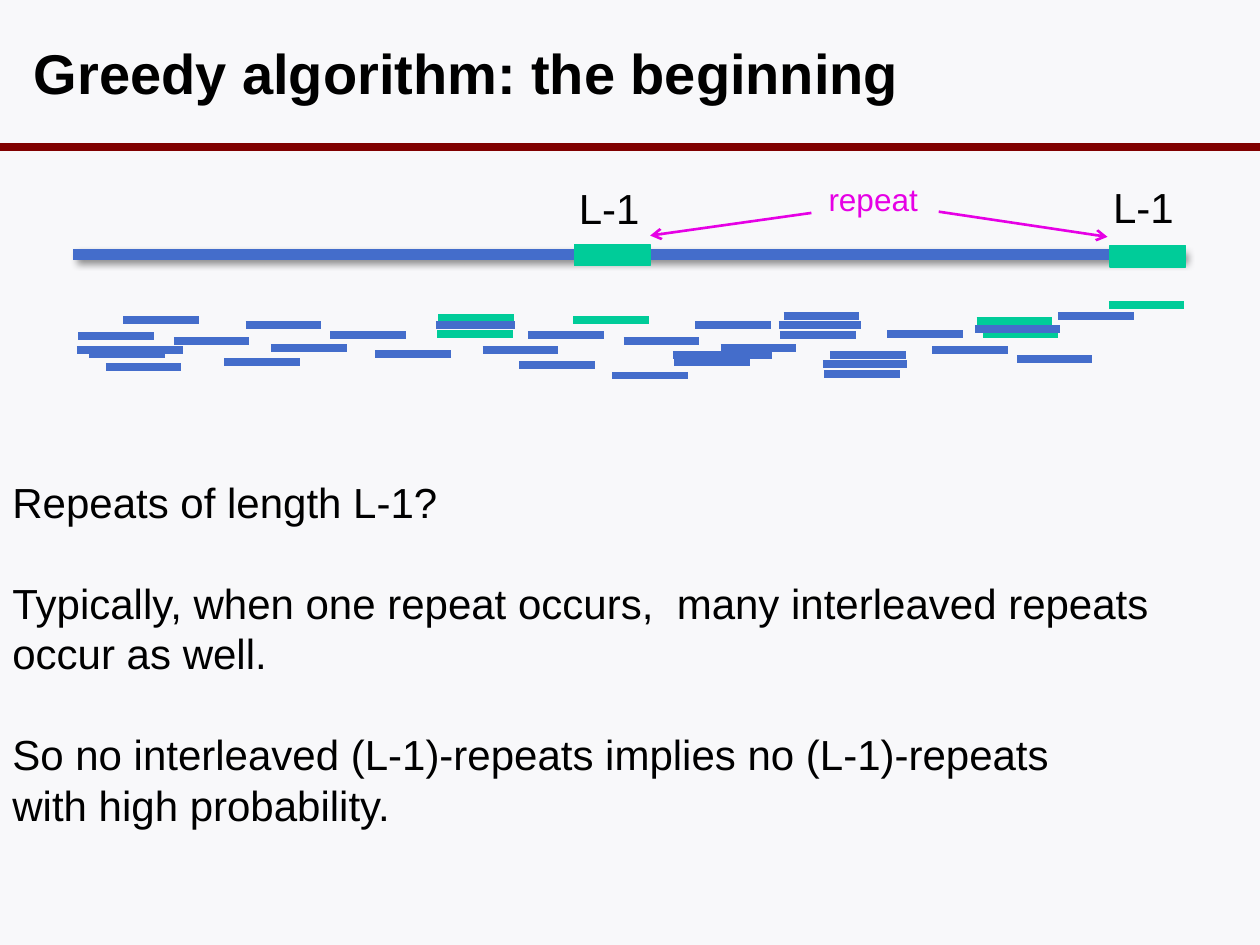
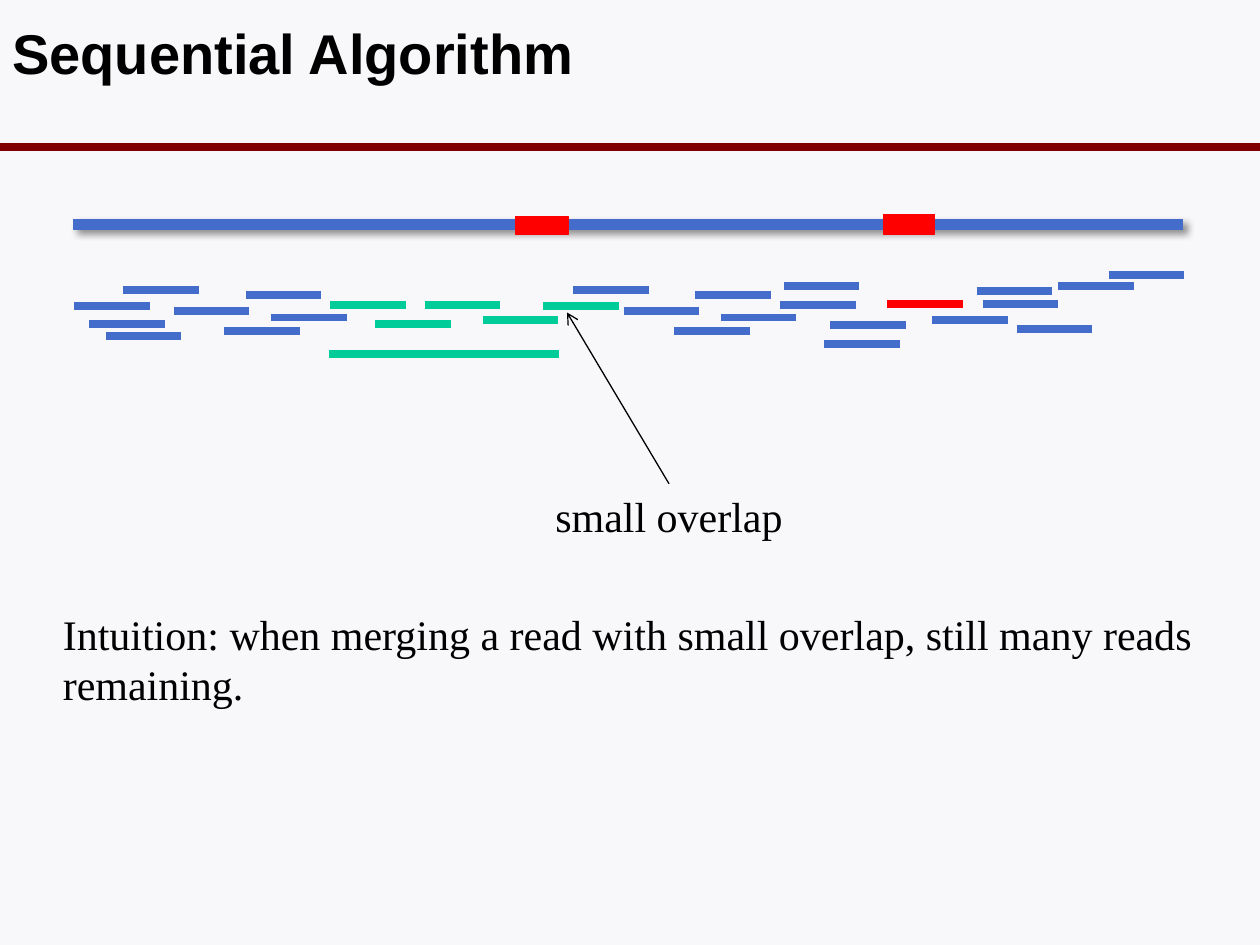
"""Builds two slides on greedy and sequential read assembly."""
import dataclasses

import lxml.etree
import pptx
import pptx.dml.color
import pptx.enum.shapes
import pptx.enum.text
import pptx.oxml
import pptx.oxml.ns
import pptx.util

Inches = pptx.util.Inches
Pt = pptx.util.Pt
RGB = pptx.dml.color.RGBColor.from_string
ALIGN = pptx.enum.text.PP_ALIGN
ANCHOR = pptx.enum.text.MSO_ANCHOR
qn = pptx.oxml.ns.qn


@dataclasses.dataclass(frozen=True)
class Theme:
    background: str = "F8F8FA"
    band: str = "800000"
    blue: str = "446DCB"
    green: str = "00CC99"
    red: str = "FF0000"
    magenta: str = "E600E5"
    black: str = "000000"
    sans: str = "Arial"
    serif: str = "Times New Roman"
    title_size: float = 32
    body_size: float = 24
    note_size: float = 18
    genome_width: float = 6
    read_width: float = 4.5
    blank_line: float = 29


theme = Theme()
SHADOW = (
    '<a:outerShdw xmlns:a="http://schemas.openxmlformats.org/drawingml/2006/main" '
    'blurRad="50800" dist="38100" dir="2700000" algn="tl" rotWithShape="0">'
    '<a:srgbClr val="000000"><a:alpha val="43000"/></a:srgbClr></a:outerShdw>'
)


def add_line(s, start, end, color, width, arrow=False, shadow=False):
    points = [Inches(v) for v in (*start, *end)]
    line = s.shapes.add_connector(pptx.enum.shapes.MSO_CONNECTOR.STRAIGHT, *points)
    line.line.color.rgb = RGB(color)
    line.line.width = Pt(width)
    sppr = line._element.spPr
    if arrow:
        lxml.etree.SubElement(sppr.find(qn("a:ln")), qn("a:tailEnd"), type="arrow")
    effects = lxml.etree.SubElement(sppr, qn("a:effectLst"))
    if shadow:
        effects.append(pptx.oxml.parse_xml(SHADOW))
    return line


def add_text(s, box, paragraphs, size, font=theme.sans, color=theme.black,
             align=ALIGN.LEFT, bold=False, anchor=ANCHOR.TOP):
    sp = s.shapes.add_textbox(*[Inches(v) for v in box])
    tf = sp.text_frame
    tf.text = "\n".join(paragraphs)
    tf.word_wrap = align == ALIGN.LEFT
    tf.vertical_anchor = anchor
    for p in tf.paragraphs:
        p.alignment = align
        for r in p.runs:
            r.font.name = font
            r.font.size = Pt(size)
            r.font.bold = bold
            r.font.color.rgb = RGB(color)
    return sp


genome_left, genome_right = 0.58, 9.39
read_length = 0.6
merge_margin = 0.01

motif_starts = {1: 0.98, 2: 4.55}
motif = {"a": (0, 0.52), "b": (0.4, 0.69), "c": (0.8, 0.85), "d": (0.97, 0.56),
         "e": (1.17, 0.74), "f": (1.64, 0.64), "g": (2.85, 0.76)}
shared_reads = {
    f"{letter}{number}": (start + offset, drop)
    for number, start in motif_starts.items()
    for letter, (offset, drop) in motif.items()
}
shared_reads |= {
    "head_upper": (0.71, 0.79), "head_lower": (0.84, 0.89),
    "bridge": (2.98, 0.79),
    "peak": (6.22, 0.49), "valley_upper": (6.59, 0.8), "valley_lower": (6.54, 0.95),
    "far": (7.04, 0.63), "pair_upper": (7.75, 0.53), "pair_lower": (7.8, 0.63),
    "tail_low": (8.07, 0.83), "tail_high": (8.4, 0.49), "last": (8.8, 0.4),
}

slides = [
    dict(
        title="Greedy algorithm: the beginning",
        title_box=(0.17, 0.16, 8.5, 0.83),
        genome_y=2.02,
        own_reads={"first": (0.62, 0.65), "twin_upper": (3.48, 0.5),
                   "twin_lower": (3.47, 0.63), "before_a2": (4.19, 0.64),
                   "under_a2": (4.12, 0.88), "deepest": (4.86, 0.96)},
        colored_reads={theme.green: ["twin_upper", "twin_lower", "pair_upper",
                                     "pair_lower", "a2", "last"]},
        merged_reads=[("twin_lower", "twin_upper", 0.56, theme.blue),
                      ("pair_upper", "pair_lower", 0.59, theme.blue),
                      ("f2", "peak", 0.56, theme.blue),
                      ("valley_lower", "valley_upper", 0.87, theme.blue),
                      ("first", "head_lower", 0.76, theme.blue),
                      ("c2", "d2", 0.8, theme.blue)],
        repeat_color=theme.green,
        repeats=[(4.56, 1.94, 0.6, 0.17), (8.81, 1.95, 0.6, 0.17)],
    ),
    dict(
        title="Sequential Algorithm",
        title_box=(0, 0, 9.7, 0.83),
        genome_y=1.78,
        own_reads={"first": (0.59, 0.65), "third_merged": (3.37, 0.64),
                   "small_overlap": (4.31, 0.65)},
        colored_reads={theme.green: ["f1", "bridge", "third_merged", "g1",
                                     "small_overlap"],
                       theme.red: ["far"]},
        merged_reads=[("f1", "g1", 1.03, theme.green)],
        repeat_color=theme.red,
        repeats=[(4.09, 1.72, 0.42, 0.14), (7.01, 1.7, 0.41, 0.16)],
    ),
]

prs = pptx.Presentation()
prs.slide_width = Inches(10)
prs.slide_height = Inches(7.5)
fill = prs.slide_master.background.fill
fill.solid()
fill.fore_color.rgb = RGB(theme.background)

for content in slides:
    s = prs.slides.add_slide(prs.slide_layouts[6])
    add_line(s, (0, 1.17), (10, 1.17), theme.band, theme.read_width)
    add_text(s, content["title_box"], [content["title"]], theme.title_size,
             bold=True, anchor=ANCHOR.MIDDLE)

    genome_y = content["genome_y"]
    add_line(s, (genome_left, genome_y), (genome_right, genome_y), theme.blue,
             theme.genome_width, shadow=True)

    reads = shared_reads | content["own_reads"]
    read_colors = {name: color for color, names in content["colored_reads"].items()
                   for name in names}
    bars = [(x, x + read_length, drop, read_colors.get(name, theme.blue))
            for name, (x, drop) in reads.items()]
    for first, last, drop, color in content["merged_reads"]:
        left = reads[first][0] - merge_margin
        right = reads[last][0] + read_length + merge_margin
        bars.append((left, right, drop, color))
    for left, right, drop, color in bars:
        y = genome_y + drop
        add_line(s, (left, y), (right, y), color, theme.read_width)

    for box in content["repeats"]:
        sp = s.shapes.add_shape(pptx.enum.shapes.MSO_SHAPE.RECTANGLE,
                                *[Inches(v) for v in box])
        sp.shadow.inherit = False
        sp.fill.solid()
        sp.fill.fore_color.rgb = RGB(content["repeat_color"])
        sp.line.color.rgb = RGB(content["repeat_color"])
        sp.line.width = Pt(0.75)

greedy, sequential = prs.slides

sp = add_text(greedy, (0, 3.73, 9.41, 2.93), [
    "Repeats of length L-1?",
    "Typically, when one repeat occurs,  many interleaved repeats",
    "occur as well.",
    "So no interleaved (L-1)-repeats implies no (L-1)-repeats",
    "with high probability.",
], theme.body_size)
for p in sp.text_frame.paragraphs[1::2]:
    p.space_before = Pt(theme.blank_line)
for start, end in [((6.44, 1.69), (5.16, 1.87)), ((7.45, 1.68), (8.79, 1.88))]:
    add_line(greedy, start, end, theme.magenta, 1.5, arrow=True)
add_text(greedy, (6.47, 1.38, 0.92, 0.4), ["repeat"], theme.note_size,
         color=theme.magenta, align=ALIGN.CENTER)
for x, y in [(4.49, 1.4), (8.73, 1.39)]:
    add_text(greedy, (x, y, 0.69, 0.5), ["L-1"], theme.body_size, align=ALIGN.CENTER)

overlap_label = add_text(sequential, (4.28, 3.84, 2.06, 0.5), ["small overlap"],
                         theme.body_size, font=theme.serif, align=ALIGN.CENTER)
arrow = add_line(sequential, (5.31, 3.84), (4.5, 2.48), theme.black, 0.75, arrow=True)
arrow.begin_connect(overlap_label, 0)
add_text(sequential, (0.4, 4.78, 9.18, 0.91), [
    "Intuition: when merging a read with small overlap, still many reads remaining.",
], theme.body_size, font=theme.serif)

prs.save("out.pptx")
